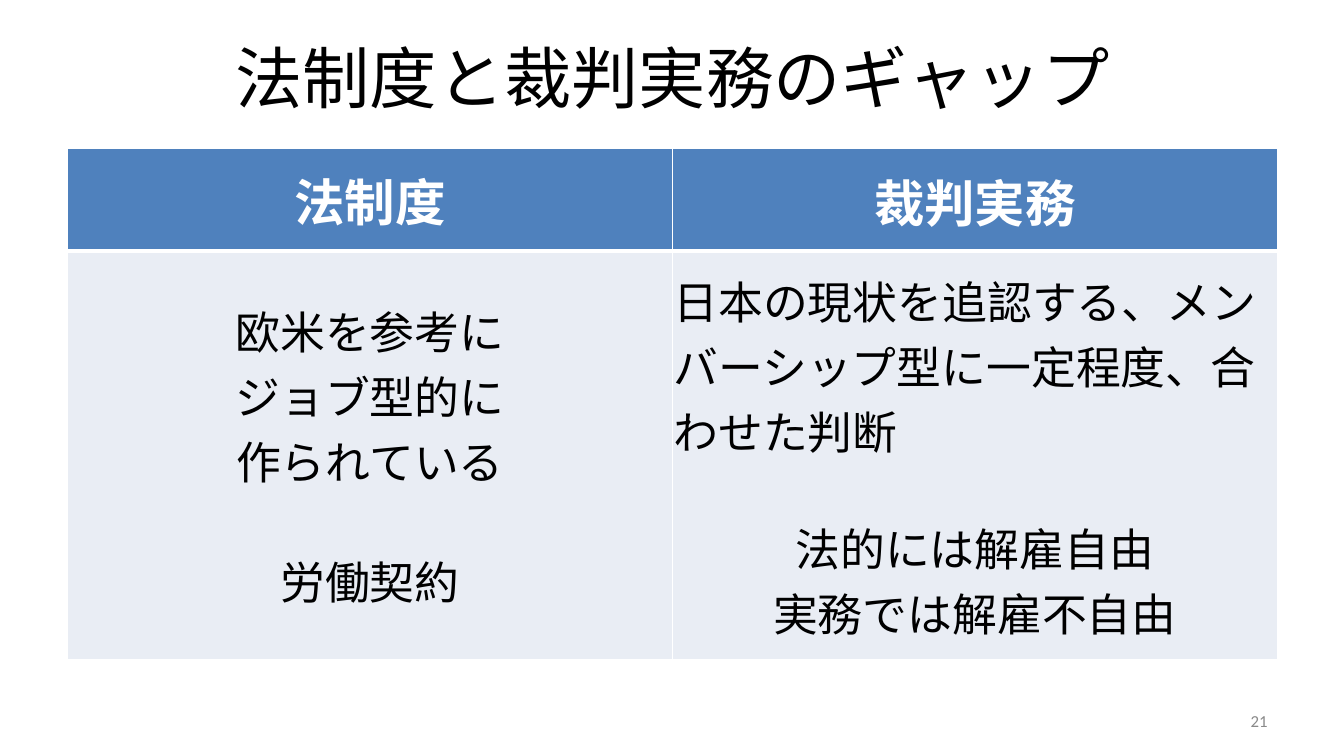
from dataclasses import dataclass

from lxml import etree
from pptx import Presentation
from pptx import util as u
from pptx.dml.color import RGBColor
from pptx.enum import text
from pptx.oxml import ns

BLACK = RGBColor(0x00, 0x00, 0x00)
WHITE = RGBColor(0xFF, 0xFF, 0xFF)
GREY = RGBColor(0x89, 0x89, 0x89)
HEADER_BLUE = RGBColor(0x4F, 0x81, 0xBD)
BODY_BLUE = RGBColor(0xE9, 0xED, 0xF4)

LEFT, CENTER, RIGHT = text.PP_ALIGN.LEFT, text.PP_ALIGN.CENTER, text.PP_ALIGN.RIGHT
THIN, THICK = 1, 3


@dataclass(frozen=True)
class Style:
    size: float
    color: RGBColor
    bold: bool = False
    font: str = "Calibri"


@dataclass(frozen=True)
class Line:
    wording: str
    align: text.PP_ALIGN = CENTER
    space_before: float = 0


@dataclass(frozen=True)
class Label:
    left: float
    top: float
    width: float
    height: float
    line: Line
    style: Style


@dataclass(frozen=True)
class Row:
    height: float
    fill: RGBColor
    top_border: float
    bottom_border: float
    styles: tuple[Style, Style]
    cells: tuple[list[Line], list[Line]]


LABELS = [
    Label(0.67, 0.3, 12, 0.93, Line("法制度と裁判実務のギャップ"), Style(48, BLACK)),
    Label(9.56, 6.95, 3.11, 0.4, Line("21", RIGHT), Style(12, GREY)),
]

HEADING = Style(36, WHITE, bold=True)
ROWS = [
    Row(1.02, HEADER_BLUE, THIN, THICK, (HEADING, HEADING),
        ([Line("法制度")], [Line("裁判実務")])),
    Row(4.05, BODY_BLUE, THICK, THIN,
        (Style(32, BLACK), Style(32, BLACK, font="Arial")),
        ([Line("欧米を参考に"),
          Line("ジョブ型的に"),
          Line("作られている"),
          Line("労働契約", space_before=39)],
         [Line("日本の現状を追認する、メンバーシップ型に一定程度、合わせた判断", LEFT),
          Line("法的には解雇自由", space_before=37),
          Line("実務では解雇不自由")])),
]

# Left, top, right and bottom margins of each column's cells
COLUMN_MARGINS = [(0.13, 0.05, 0.13, 0.05), (0.01, 0.01, 0.01, 0)]
COLUMN_WIDTH = 6


def write_lines(frame, lines: list[Line], style: Style) -> None:
    for index, line in enumerate(lines):
        paragraph = frame.add_paragraph() if index else frame.paragraphs[0]
        paragraph.alignment = line.align
        paragraph.space_before = u.Pt(line.space_before)
        run = paragraph.add_run()
        run.text = line.wording
        run.font.size = u.Pt(style.size)
        run.font.name = style.font
        run.font.bold = style.bold
        run.font.color.rgb = style.color


def add_label(slide, label: Label) -> None:
    box = slide.shapes.add_textbox(u.Inches(label.left), u.Inches(label.top),
                                   u.Inches(label.width), u.Inches(label.height))
    frame = box.text_frame
    frame.word_wrap = True
    frame.vertical_anchor = text.MSO_ANCHOR.MIDDLE
    write_lines(frame, [label.line], label.style)


def set_borders(cell, top: float, bottom: float) -> None:
    """Draw white borders, thin at the sides, placed before the cell's fill."""
    properties = cell._tc.get_or_add_tcPr()
    widths = {"a:lnL": THIN, "a:lnR": THIN, "a:lnT": top, "a:lnB": bottom}
    for position, (tag, width) in enumerate(widths.items()):
        border = etree.Element(ns.qn(tag), w=str(u.Pt(width)))
        fill = etree.SubElement(border, ns.qn("a:solidFill"))
        etree.SubElement(fill, ns.qn("a:srgbClr"), val=str(WHITE))
        properties.insert(position, border)


def add_comparison(slide) -> None:
    height = sum(row.height for row in ROWS)
    frame = slide.shapes.add_table(
        len(ROWS), len(COLUMN_MARGINS), u.Inches(0.67), u.Inches(1.47),
        u.Inches(COLUMN_WIDTH * len(COLUMN_MARGINS)), u.Inches(height))
    table = frame.table
    for column in table.columns:
        column.width = u.Inches(COLUMN_WIDTH)
    for r, row in enumerate(ROWS):
        table.rows[r].height = u.Inches(row.height)
        for c, margins in enumerate(COLUMN_MARGINS):
            cell = table.cell(r, c)
            (cell.margin_left, cell.margin_top,
             cell.margin_right, cell.margin_bottom) = map(u.Inches, margins)
            cell.vertical_anchor = text.MSO_ANCHOR.MIDDLE
            cell.fill.solid()
            cell.fill.fore_color.rgb = row.fill
            set_borders(cell, row.top_border, row.bottom_border)
            write_lines(cell.text_frame, row.cells[c], row.styles[c])


def main() -> None:
    deck = Presentation()
    deck.slide_width, deck.slide_height = u.Inches(13.33), u.Inches(7.5)
    slide = deck.slides.add_slide(deck.slide_layouts[6])
    for label in LABELS:
        add_label(slide, label)
    add_comparison(slide)
    deck.save("out.pptx")


if __name__ == "__main__":
    main()
